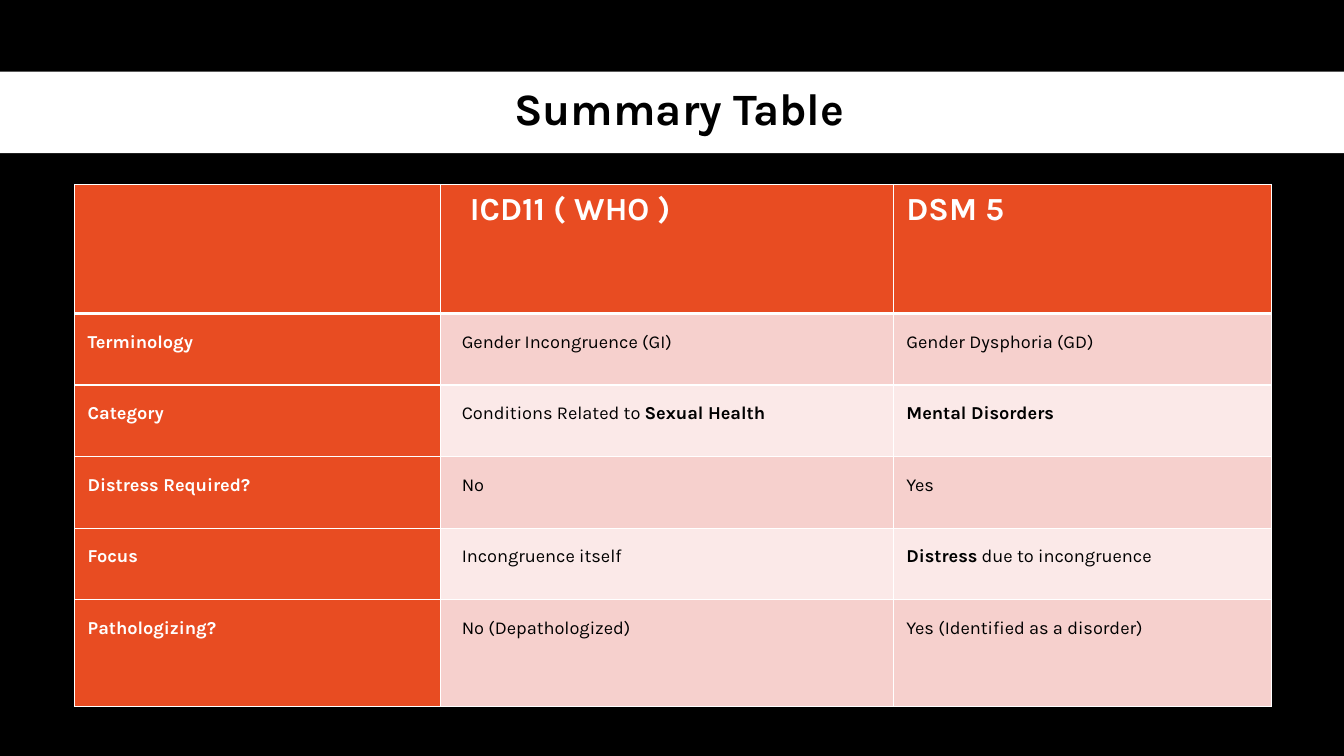
import pptx
import pptx.dml.color
import pptx.enum.shapes
import pptx.enum.text
import pptx.oxml
import pptx.oxml.ns
import pptx.util

Inches, Pt = pptx.util.Inches, pptx.util.Pt
COLORS = {
    "black": "000000",
    "white": "FFFFFF",
    "orange": "E84C22",
    "odd row": "F6D0CD",
    "even row": "FBE9E8",
}
COLUMN_WIDTHS = [3.63, 4.49, 3.75]
ROW_HEIGHTS = [1.28] + [0.71] * 4 + [1.06]
# Text between double asterisks is bold.
ROWS = [
    ["", "**ICD11 ( WHO )**", "**DSM 5**"],
    ["**Terminology**", "Gender Incongruence (GI)", "Gender Dysphoria (GD)"],
    ["**Category**", "Conditions Related to **Sexual Health**", "**Mental Disorders**"],
    ["**Distress Required?**", "No", "Yes"],
    ["**Focus**", "Incongruence itself", "**Distress** due to incongruence"],
    ["**Pathologizing?**", "No (Depathologized)", "Yes (Identified as a disorder)"],
]


def rgb(name):
    return pptx.dml.color.RGBColor.from_string(COLORS[name])


def write(paragraph, marked_text, size, color):
    """Add the text as runs, bold where it stands between double asterisks."""
    for index, piece in enumerate(marked_text.split("**")):
        if piece:
            run = paragraph.add_run()
            run.text = piece
            run.font.name = "Karla"
            run.font.size = Pt(size)
            run.font.bold = index % 2 == 1
            run.font.color.rgb = rgb(color)


presentation = pptx.Presentation()
presentation.slide_width = Inches(13.33)
presentation.slide_height = Inches(7.5)
slide = presentation.slides.add_slide(presentation.slide_layouts[6])
slide.background.fill.solid()
slide.background.fill.fore_color.rgb = rgb("black")

# Title band
band = slide.shapes.add_shape(
    pptx.enum.shapes.MSO_SHAPE.RECTANGLE,
    0, Inches(0.71), presentation.slide_width, Inches(0.81))
band.shadow.inherit = False
band.fill.solid()
band.fill.fore_color.rgb = rgb("white")
band.line.fill.background()

title = slide.shapes.add_textbox(Inches(0.61), Inches(0.7), Inches(12.26), Inches(0.81))
title.text_frame.word_wrap = True
title.text_frame.vertical_anchor = pptx.enum.text.MSO_ANCHOR.MIDDLE
heading = title.text_frame.paragraphs[0]
heading.alignment = pptx.enum.text.PP_ALIGN.CENTER
heading.line_spacing = 0.9
heading.space_after = Pt(6)
write(heading, "**Summary Table**", 32, "black")

# Comparison table
comparison = slide.shapes.add_table(
    len(ROWS), len(COLUMN_WIDTHS), Inches(0.74), Inches(1.83),
    Inches(sum(COLUMN_WIDTHS)), Inches(sum(ROW_HEIGHTS))).table
for column, width in zip(comparison.columns, COLUMN_WIDTHS):
    column.width = Inches(width)
for row, height in zip(comparison.rows, ROW_HEIGHTS):
    row.height = Inches(height)

for r, texts in enumerate(ROWS):
    for c, text in enumerate(texts):
        cell = comparison.cell(r, c)
        is_header = r == 0
        is_label = is_header or c == 0

        border_widths = {"L": 1, "R": 1, "T": 3 if r == 1 else 1, "B": 3 if is_header else 1}
        for side, width in border_widths.items():
            cell._tc.get_or_add_tcPr().append(pptx.oxml.parse_xml(
                f'<a:ln{side} {pptx.oxml.ns.nsdecls("a")} w="{Pt(width)}"><a:solidFill>'
                f'<a:srgbClr val="{COLORS["white"]}"/></a:solidFill></a:ln{side}>'))
        cell.fill.solid()
        cell.fill.fore_color.rgb = rgb(
            "orange" if is_label else "odd row" if r % 2 else "even row")

        cell.margin_top = cell.margin_bottom = Inches(0.06 if is_header else 0.16)
        cell.margin_left = Inches(0.13 if c != 1 else 0.29 if is_header else 0.21)
        cell.margin_right = Inches(0.13 if is_header or c == 2 else 0.21)
        paragraph = cell.text_frame.paragraphs[0]
        if not is_header:
            paragraph.line_spacing = Pt(16.5)
        write(paragraph, text, 23 if is_header else 13, "white" if is_label else "black")

presentation.save("out.pptx")
